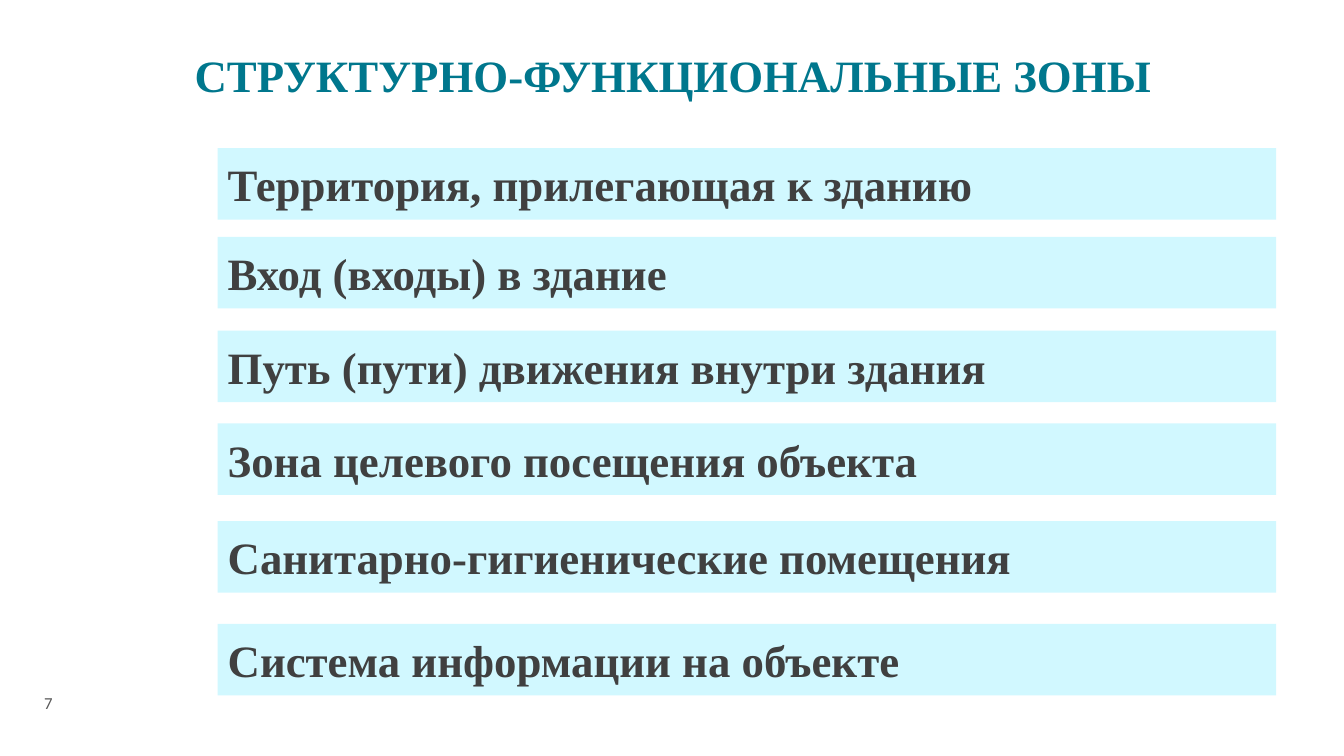
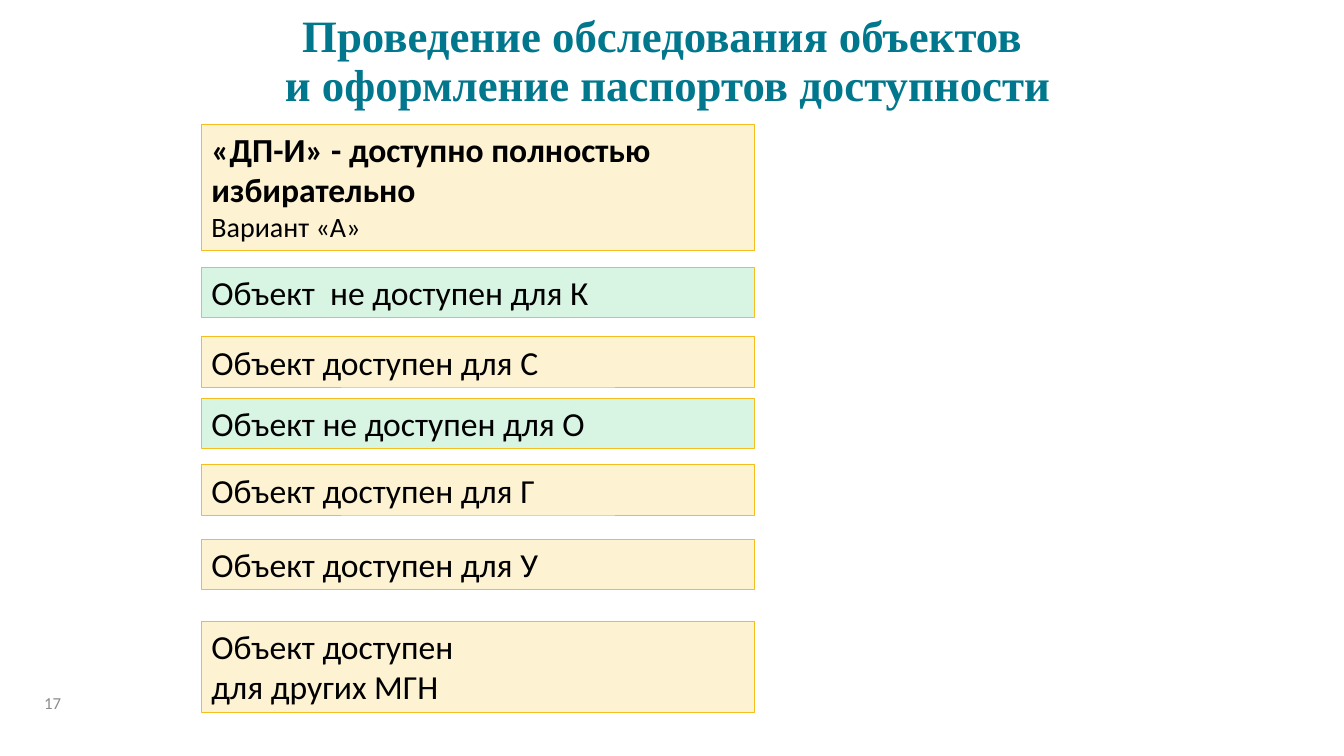
from dataclasses import dataclass
from typing import Optional

from pptx import Presentation
from pptx.dml.color import RGBColor
from pptx.enum.shapes import MSO_SHAPE
from pptx.enum.text import MSO_ANCHOR, MSO_AUTO_SIZE, PP_ALIGN
from pptx.presentation import Presentation as Deck
from pptx.slide import Slide
from pptx.text.text import TextFrame
from pptx.util import Inches, Pt

# Colours, fonts and enum members
TEAL = RGBColor(0x00, 0x77, 0x8D)
AQUA = RGBColor(0xD1, 0xF8, 0xFF)
CREAM = RGBColor(0xFD, 0xF2, 0xD2)
MINT = RGBColor(0xD8, 0xF4, 0xE3)
GOLD = RGBColor(0xF6, 0xBD, 0x1E)
BLACK = RGBColor(0x00, 0x00, 0x00)
CHARCOAL = RGBColor(0x40, 0x40, 0x40)
DARK_GREY = RGBColor(0x59, 0x59, 0x59)
MID_GREY = RGBColor(0x8C, 0x8C, 0x8C)
SERIF, SANS = "Times New Roman", "Calibri"
LEFT, CENTER = PP_ALIGN.LEFT, PP_ALIGN.CENTER
TOP, MIDDLE = MSO_ANCHOR.TOP, MSO_ANCHOR.MIDDLE
NO_FIT = MSO_AUTO_SIZE.NONE
RECTANGLE = MSO_SHAPE.RECTANGLE

# Slide grid
SLIDE_WIDTH, SLIDE_HEIGHT = Inches(13.33), Inches(7.5)
COLUMNS, ROWS = 80, 45
TITLE_ONLY = 5


@dataclass(frozen=True)
class Area:
    """A place on the slide, in grid columns and rows."""
    column: float
    row: float
    columns: float
    rows: float

    def place(self) -> tuple[int, int, int, int]:
        across, down = SLIDE_WIDTH / COLUMNS, SLIDE_HEIGHT / ROWS
        return (round(self.column * across), round(self.row * down),
                round(self.columns * across), round(self.rows * down))


@dataclass(frozen=True)
class Style:
    font: str
    size: int
    color: RGBColor
    bold: bool = False


@dataclass(frozen=True)
class Line:
    text: str
    style: Style


@dataclass(frozen=True)
class Card:
    row: float
    rows: float
    fill: RGBColor
    lines: tuple[Line, ...]


TITLE = Style(SERIF, 32, TEAL, True)
ZONE = Style(SERIF, 32, CHARCOAL, True)
STATUS = Style(SANS, 24, BLACK)
STATUS_HEAD = Style(SANS, 24, BLACK, True)
STATUS_NOTE = Style(SANS, 20, BLACK)

NUMBER_AREA = Area(2.04, 41.16, 4.74, 1.32)
ZONE_COLUMN, ZONE_COLUMNS, ZONE_ROWS = 12.96, 63, 4.26
CARD_COLUMN, CARD_COLUMNS, CARD_ROWS = 12, 32.9, 3

ZONES = (
    (8.82, "Территория, прилегающая к зданию"),
    (14.1, "Вход (входы) в здание"),
    (19.68, "Путь (пути) движения внутри здания"),
    (25.2, "Зона целевого посещения объекта"),
    (31.02, "Санитарно-гигиенические помещения"),
    (37.14, "Система информации на объекте"),
)

CARDS = (
    Card(7.38, 7.5, CREAM,
         (Line("«ДП-И» - доступно полностью избирательно", STATUS_HEAD),
          Line("Вариант «А»", STATUS_NOTE))),
    Card(15.9, CARD_ROWS, MINT, (Line("Объект  не доступен для К", STATUS),)),
    Card(20.04, CARD_ROWS, CREAM, (Line("Объект доступен для С", STATUS),)),
    Card(23.7, CARD_ROWS, MINT, (Line("Объект не доступен для О", STATUS),)),
    Card(27.66, CARD_ROWS, CREAM, (Line("Объект доступен для Г", STATUS),)),
    Card(32.1, CARD_ROWS, CREAM, (Line("Объект доступен для У", STATUS),)),
    Card(36.96, 5.46, CREAM,
         (Line("Объект доступен", STATUS), Line("для других МГН", STATUS))),
)


def write(frame: TextFrame, lines: tuple[Line, ...], anchor: MSO_ANCHOR,
          align: PP_ALIGN = LEFT, spacing: float = 1.0) -> None:
    frame.word_wrap = True
    frame.auto_size = NO_FIT
    frame.vertical_anchor = anchor
    for index, line in enumerate(lines):
        para = frame.add_paragraph() if index else frame.paragraphs[0]
        para.alignment = align
        para.line_spacing = spacing
        span = para.add_run()
        span.text = line.text
        span.font.name = line.style.font
        span.font.size = Pt(line.style.size)
        span.font.bold = line.style.bold
        span.font.color.rgb = line.style.color


def add_page(deck: Deck, title: tuple[str, ...], area: Area,
             anchor: MSO_ANCHOR, align: PP_ALIGN, spacing: float,
             number: str, number_color: RGBColor) -> Slide:
    """Add a page with its title and page number."""
    page = deck.slides.add_slide(deck.slide_layouts[TITLE_ONLY])
    heading = page.shapes.title
    heading.left, heading.top, heading.width, heading.height = area.place()
    write(heading.text_frame, tuple(Line(text, TITLE) for text in title),
          anchor, align, spacing)
    box = page.shapes.add_textbox(*NUMBER_AREA.place())
    write(box.text_frame, (Line(number, Style(SANS, 12, number_color)),),
          MIDDLE)
    return page


def add_panel(page: Slide, area: Area, fill: RGBColor,
              lines: tuple[Line, ...], anchor: MSO_ANCHOR,
              border: Optional[RGBColor] = None) -> None:
    panel = page.shapes.add_shape(RECTANGLE, *area.place())
    panel.shadow.inherit = False
    panel.fill.solid()
    panel.fill.fore_color.rgb = fill
    if border is None:
        panel.line.fill.background()
    else:
        panel.line.color.rgb = border
        panel.line.width = Pt(0.5)
    write(panel.text_frame, lines, anchor)


def add_zones_page(deck: Deck) -> None:
    page = add_page(deck, ("СТРУКТУРНО-ФУНКЦИОНАЛЬНЫЕ ЗОНЫ",),
                    Area(10.98, 2.52, 60.72, 3.84), TOP, LEFT, 1.0,
                    "7", DARK_GREY)
    for row, text in ZONES:
        add_panel(page, Area(ZONE_COLUMN, row, ZONE_COLUMNS, ZONE_ROWS),
                  AQUA, (Line(text, ZONE),), MIDDLE)


def add_passport_page(deck: Deck) -> None:
    page = add_page(deck, ("Проведение обследования объектов ",
                           "и оформление паспортов доступности"),
                    Area(10.62, 0.66, 58.26, 6.12), MIDDLE, CENTER, 0.9,
                    "17", MID_GREY)
    for card in CARDS:
        add_panel(page, Area(CARD_COLUMN, card.row, CARD_COLUMNS, card.rows),
                  card.fill, card.lines, TOP, GOLD)


def main() -> None:
    deck = Presentation()
    deck.slide_width, deck.slide_height = SLIDE_WIDTH, SLIDE_HEIGHT
    add_zones_page(deck)
    add_passport_page(deck)
    deck.save("out.pptx")


if __name__ == "__main__":
    main()
